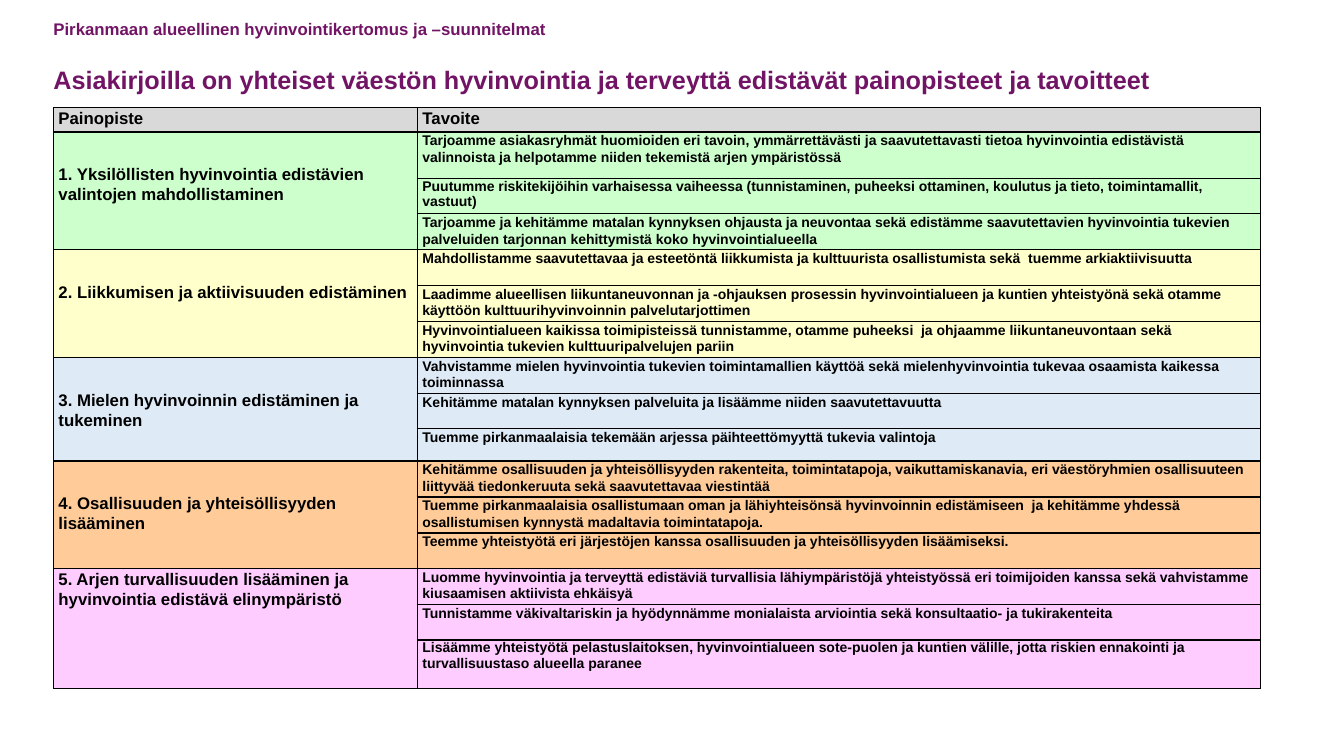
from pptx import Presentation
from pptx.util import Inches, Pt
from pptx.dml.color import RGBColor
from pptx.oxml import parse_xml
from pptx.oxml.ns import nsdecls

# Content
FONT, PURPLE, BLACK, GREY = "Arial", "721465", "000000", "D9D9D9"
KICKER = "Pirkanmaan alueellinen hyvinvointikertomus ja –suunnitelmat"
TITLE = "Asiakirjoilla on yhteiset väestön hyvinvointia ja terveyttä edistävät painopisteet ja tavoitteet"
HEADER = ("Painopiste", "Tavoite")
# Each group: fill, focus area, goals
GROUPS = [
    ("CCFFCC", "1. Yksilöllisten hyvinvointia edistävien valintojen mahdollistaminen", [
        "Tarjoamme asiakasryhmät huomioiden eri tavoin, ymmärrettävästi ja saavutettavasti tietoa hyvinvointia edistävistä valinnoista ja helpotamme niiden tekemistä arjen ympäristössä",
        "Puutumme riskitekijöihin varhaisessa vaiheessa (tunnistaminen, puheeksi ottaminen, koulutus ja tieto, toimintamallit, vastuut)",
        "Tarjoamme ja kehitämme matalan kynnyksen ohjausta ja neuvontaa sekä edistämme saavutettavien hyvinvointia tukevien palveluiden tarjonnan kehittymistä koko hyvinvointialueella",
    ]),
    ("FFFFCC", "2. Liikkumisen ja aktiivisuuden edistäminen", [
        "Mahdollistamme saavutettavaa ja esteetöntä liikkumista ja kulttuurista osallistumista sekä  tuemme arkiaktiivisuutta",
        "Laadimme alueellisen liikuntaneuvonnan ja -ohjauksen prosessin hyvinvointialueen ja kuntien yhteistyönä sekä otamme käyttöön kulttuurihyvinvoinnin palvelutarjottimen",
        "Hyvinvointialueen kaikissa toimipisteissä tunnistamme, otamme puheeksi  ja ohjaamme liikuntaneuvontaan sekä hyvinvointia tukevien kulttuuripalvelujen pariin",
    ]),
    ("DEEAF6", "3. Mielen hyvinvoinnin edistäminen ja tukeminen", [
        "Vahvistamme mielen hyvinvointia tukevien toimintamallien käyttöä sekä mielenhyvinvointia tukevaa osaamista kaikessa toiminnassa",
        "Kehitämme matalan kynnyksen palveluita ja lisäämme niiden saavutettavuutta",
        "Tuemme pirkanmaalaisia tekemään arjessa päihteettömyyttä tukevia valintoja",
    ]),
    ("FFCC99", "4. Osallisuuden ja yhteisöllisyyden lisääminen", [
        "Kehitämme osallisuuden ja yhteisöllisyyden rakenteita, toimintatapoja, vaikuttamiskanavia, eri väestöryhmien osallisuuteen liittyvää tiedonkeruuta sekä saavutettavaa viestintää",
        "Tuemme pirkanmaalaisia osallistumaan oman ja lähiyhteisönsä hyvinvoinnin edistämiseen  ja kehitämme yhdessä osallistumisen kynnystä madaltavia toimintatapoja.",
        "Teemme yhteistyötä eri järjestöjen kanssa osallisuuden ja yhteisöllisyyden lisäämiseksi.",
    ]),
    ("FFCCFF", "5. Arjen turvallisuuden lisääminen ja hyvinvointia edistävä elinympäristö", [
        "Luomme hyvinvointia ja terveyttä edistäviä turvallisia lähiympäristöjä yhteistyössä eri toimijoiden kanssa sekä vahvistamme kiusaamisen aktiivista ehkäisyä",
        "Tunnistamme väkivaltariskin ja hyödynnämme monialaista arviointia sekä konsultaatio- ja tukirakenteita",
        "Lisäämme yhteistyötä pelastuslaitoksen, hyvinvointialueen sote-puolen ja kuntien välille, jotta riskien ennakointi ja turvallisuustaso alueella paranee",
    ]),
]

# Grid, in inches
LEFT, TITLE_TOP, TABLE_TOP = 0.53, 0.21, 1.07
COLS = (3.61, 8.36)
ROW = 0.352
SPECIAL_ROWS = {0: 0.24, 1: 0.46, 9: 0.32, 15: 0.48}
SINGLE_SPACED = {2, 15}
FOCUS_DROP = 0.32


def color(value):
    return RGBColor.from_string(value)


def write(p, text, size, ink, spacing):
    p.line_spacing = spacing
    r = p.add_run()
    r.text = text
    r.font.name, r.font.size, r.font.bold = FONT, Pt(size), True
    r.font.color.rgb = color(ink)


def style_cell(cell, fill):
    tcPr = cell._tc.get_or_add_tcPr()
    for side in "LRTB":
        tcPr.append(parse_xml(
            f'<a:ln{side} {nsdecls("a")} w="12700"><a:solidFill>'
            f'<a:srgbClr val="{BLACK}"/></a:solidFill></a:ln{side}>'))
    cell.fill.solid()
    cell.fill.fore_color.rgb = color(fill)
    cell.margin_left = cell.margin_right = Inches(0.05)
    cell.margin_top = cell.margin_bottom = 0


def fill_cell(cell, text, size, spacing=1.07):
    write(cell.text_frame.paragraphs[0], text, size, BLACK, spacing)


prs = Presentation()
prs.slide_width, prs.slide_height = Inches(13.33), Inches(7.5)
s = prs.slides.add_slide(prs.slide_layouts[6])

# Heading
tf = s.shapes.add_textbox(Inches(LEFT), Inches(TITLE_TOP), Inches(12.28), Inches(0.71)).text_frame
tf.word_wrap = True
tf.margin_left = tf.margin_right = tf.margin_top = tf.margin_bottom = 0
write(tf.paragraphs[0], KICKER, 12, PURPLE, 0.9)
p = tf.add_paragraph()
p.space_before = Pt(20)
write(p, TITLE, 18, PURPLE, 0.9)

# Table grid
fills = [GREY] + [fill for fill, _, goals in GROUPS for _ in goals]
heights = [SPECIAL_ROWS.get(i, ROW) for i in range(len(fills))]
table = s.shapes.add_table(len(fills), len(COLS), Inches(LEFT), Inches(TABLE_TOP),
                           Inches(sum(COLS)), Inches(sum(heights))).table
table.first_row = table.horz_banding = False
for column, width in zip(table.columns, COLS):
    column.width = Inches(width)
for i, (row, height) in enumerate(zip(table.rows, heights)):
    row.height = Inches(height)
    for cell in row.cells:
        style_cell(cell, fills[i])
        cell.text_frame.paragraphs[0].font.size = Pt(10)

# Header and groups
for j, label in enumerate(HEADER):
    fill_cell(table.cell(0, j), label, 12)
top = 1
for _, focus, goals in GROUPS:
    cell = table.cell(top, 0)
    cell.merge(table.cell(top + len(goals) - 1, 0))
    cell.margin_top = Inches(0 if focus == GROUPS[-1][1] else FOCUS_DROP)
    fill_cell(cell, focus, 12)
    for i, goal in enumerate(goals, top):
        fill_cell(table.cell(i, 1), goal, 10, 1.0 if i in SINGLE_SPACED else 1.07)
    top += len(goals)

prs.save("out.pptx")
